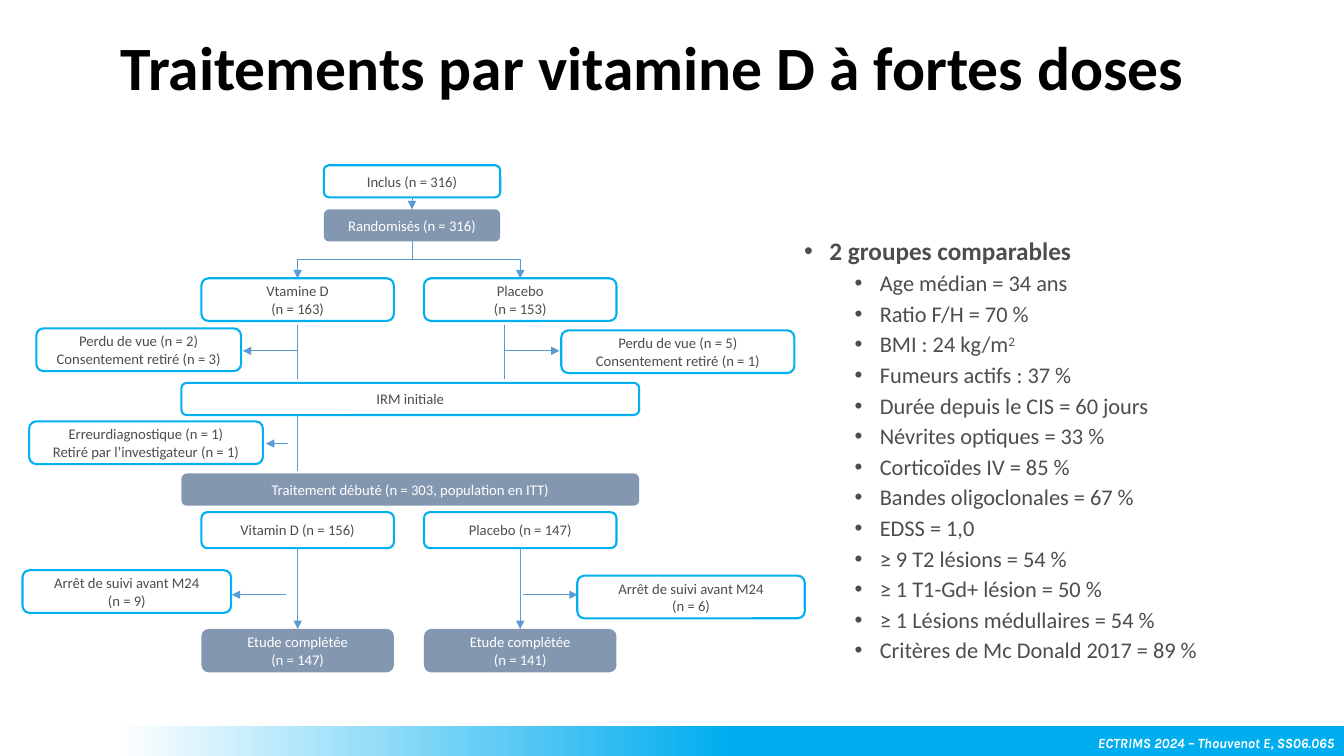
from copy import deepcopy

from lxml import etree
from pptx import Presentation
from pptx.dml.color import RGBColor
from pptx.enum.shapes import MSO_CONNECTOR as Link, MSO_SHAPE as Shape
from pptx.enum.text import MSO_ANCHOR as Anchor, PP_ALIGN as Align
from pptx.oxml.ns import qn
from pptx.util import Pt

WHITE = RGBColor(0xFF, 0xFF, 0xFF)
BLACK = RGBColor(0, 0, 0)
GREY = RGBColor(0x4D, 0x4D, 0x4D)
SLATE = RGBColor(0x84, 0x97, 0xB0)
CYAN = RGBColor(0x00, 0xB0, 0xF0)
FOOTER_BLUE = RGBColor(0x00, 0xAD, 0xEF)
ARROW_BLUE = RGBColor(0x5B, 0x9B, 0xD5)

# Centre lines of the flow chart, in points
TRUNK, VITAMIN, PLACEBO = 294.3, 212.6, 371.6
ARM_WIDTH, ROW, DOUBLE_ROW = 137.5, 23, 30.5

FLOW_STEPS = [  # label, centre, top, width, height, highlighted
    ("Inclus (n = 316)", TRUNK, 118, 126, ROW, False),
    ("Randomisés (n = 316)", TRUNK, 149.5, 126, ROW, True),
    ("Vtamine D\n(n = 163)", VITAMIN, 198.8, ARM_WIDTH, DOUBLE_ROW, False),
    ("Placebo\n(n = 153)", PLACEBO, 198.8, ARM_WIDTH, DOUBLE_ROW, False),
    ("Perdu de vue (n = 2)\nConsentement retiré (n = 3)", 99.1, 234.6, 146.3, DOUBLE_ROW, False),
    ("Perdu de vue (n = 5)\nConsentement retiré (n = 1)", 484.2, 236, 166.5, DOUBLE_ROW, False),
    ("IRM initiale", 293.1, 273.5, 327, ROW, False),
    ("Erreurdiagnostique (n = 1)\nRetiré par l’investigateur (n = 1)", 104.3, 301, 167, DOUBLE_ROW, False),
    ("Traitement débuté (n = 303, population en ITT)", 293.1, 338.2, 327, ROW, True),
    ("Vitamin D (n = 156)", VITAMIN, 365.8, ARM_WIDTH, 25.7, False),
    ("Placebo (n = 147)", PLACEBO, 365.8, ARM_WIDTH, 25.7, False),
    ("Etude complétée\n(n = 147)", VITAMIN, 449.3, ARM_WIDTH, 31, True),
    ("Etude complétée\n(n = 141)", PLACEBO, 449.3, ARM_WIDTH, 31, True),
    ("Arrêt de suivi avant M24\n(n = 9)", 90.6, 407.3, 149, DOUBLE_ROW, False),
    ("Arrêt de suivi avant M24\n(n = 6)", 493.6, 411.2, 162.5, DOUBLE_ROW, False),
]

ARROWS = [  # start x, start y, end x, end y
    (TRUNK, 141, TRUNK, 149.5),
    (VITAMIN, 250.6, 173.5, 250.6),
    (360.7, 250.6, 399.6, 250.6),
    (206, 316.8, 190, 316.8),
    (VITAMIN, 391.3, VITAMIN, 449.3),
    (PLACEBO, 391.3, PLACEBO, 449.3),
    (204.5, 424.8, 165.6, 424.8),
    (373.7, 424.8, 412.6, 424.8),
]
PLAIN_LINES = [
    (VITAMIN, 231.8, VITAMIN, 270.7),
    (360, 231.8, 360, 270.7),
    (VITAMIN, 297.4, VITAMIN, 336.2),
]

BASELINE_DATA = [
    "Age médian = 34 ans", "Ratio F/H = 70 %", "BMI : 24 kg/m^2",
    "Fumeurs actifs : 37 %", "Durée depuis le CIS = 60 jours",
    "Névrites optiques = 33 %", "Corticoïdes IV = 85 %",
    "Bandes oligoclonales = 67 %", "EDSS = 1,0", "≥ 9 T2 lésions = 54 %",
    "≥ 1 T1-Gd+ lésion = 50 %", "≥ 1 Lésions médullaires = 54 %",
    "Critères de Mc Donald 2017 = 89 %",
]


def write(paragraph, text, size=10.5, color=GREY, font="Calibri", bold=False,
          italic=False, align=Align.CENTER):
    """Add formatted text; whatever follows a ^ is superscript."""
    paragraph.alignment = align
    for index, part in enumerate(text.split("^")):
        run = paragraph.add_run()
        run.text = part
        run.font.size, run.font.name = Pt(size), font
        run.font.bold, run.font.italic = bold, italic
        run.font.color.rgb = color
        if index:
            run.font._element.set("baseline", "30000")


class FlowSlide:
    """The slide with its flow chart, bullet list and footer style."""

    def __init__(self, deck):
        self.slide = deck.slides.add_slide(deck.slide_layouts[5])
        self.shapes = self.slide.shapes

    def title(self, text):
        heading = self.shapes.title
        heading.left, heading.top, heading.width, heading.height = (
            Pt(52.4), Pt(-2), Pt(828), Pt(104.4))
        heading.text_frame.vertical_anchor = Anchor.MIDDLE
        line = heading.text_frame.paragraphs[0]
        line.line_spacing = 0.9
        write(line, text, size=44, color=BLACK, bold=True)

    def step(self, label, center, top, width, height, highlighted):
        box = self.shapes.add_shape(Shape.ROUNDED_RECTANGLE, Pt(center - width / 2),
                                    Pt(top), Pt(width), Pt(height))
        box.shadow.inherit = False
        box.fill.solid()
        box.fill.fore_color.rgb = SLATE if highlighted else WHITE
        if highlighted:
            box.line.fill.background()
        else:
            box.line.color.rgb, box.line.width = CYAN, Pt(1.5)
        frame = box.text_frame
        frame.word_wrap, frame.vertical_anchor = True, Anchor.MIDDLE
        frame.margin_top = frame.margin_bottom = 0
        for index, text in enumerate(label.split("\n")):
            line = frame.add_paragraph() if index else frame.paragraphs[0]
            write(line, text, color=WHITE if highlighted else GREY)

    def link(self, x1, y1, x2, y2, kind=Link.STRAIGHT, arrow=True):
        line = self.shapes.add_connector(kind, Pt(x1), Pt(y1), Pt(x2), Pt(y2))
        line.line.color.rgb, line.line.width = ARROW_BLUE, Pt(0.5)
        if arrow:
            stroke = line.line._get_or_add_ln()
            etree.SubElement(stroke, qn("a:tailEnd"), type="triangle")
        properties = line._element.spPr
        etree.SubElement(properties, qn("a:effectLst"))
        return properties.find(qn("a:xfrm"))

    def branch(self, x1, y1, x2, y2):
        """Draw an elbow arrow that leaves downwards, by turning it a quarter."""
        side = 1 if x2 > x1 else -1
        middle_x, middle_y = (x1 + x2) / 2, (y1 + y2) / 2
        half_run, half_drop = abs(x2 - x1) / 2, (y2 - y1) / 2
        frame = self.link(middle_x + side * half_drop, middle_y - half_run,
                          middle_x - side * half_drop, middle_y + half_run, Link.ELBOW)
        frame.set("rot", str((270 if side > 0 else 90) * 60000))

    def bullets(self, heading, items):
        frame = self.shapes.add_textbox(Pt(567.4), Pt(167), Pt(324), Pt(341.3)).text_frame
        frame.word_wrap = True
        for index, text in enumerate([heading, *items]):
            line = frame.add_paragraph() if index else frame.paragraphs[0]
            line.level = 1 if index else 0
            line.line_spacing = 0.9
            line.space_before = Pt(4.6 if index else 0)
            write(line, text, size=16 if index else 18, bold=not index, align=Align.LEFT)
            layout = line._p.get_or_add_pPr()
            layout.set("marL", str(Pt(54 if index else 18)))
            layout.set("indent", str(Pt(-18)))
            etree.SubElement(layout, qn("a:buFont"), typeface="Arial")
            etree.SubElement(layout, qn("a:buChar"), char="•")

    def footer(self, text):
        bar = self.shapes.add_shape(Shape.RECTANGLE, Pt(82.8), Pt(518.4), Pt(877.2), Pt(21.6))
        bar.shadow.inherit = False
        bar.line.fill.background()
        bar.fill.gradient()
        bar.fill.gradient_angle = 180
        stops = bar._element.spPr.find(".//" + qn("a:gsLst"))
        stops.insert(0, deepcopy(stops[0]))
        colors = [(0, FOOTER_BLUE), (0.5, FOOTER_BLUE), (1, WHITE)]
        for stop, (position, color) in zip(bar.fill.gradient_stops, colors):
            stop.position, stop.color.rgb = position, color
        frame = bar.text_frame
        frame.word_wrap, frame.vertical_anchor = False, Anchor.BOTTOM
        write(frame.paragraphs[0], text, size=10, color=WHITE, font="Karla",
              bold=True, italic=True, align=Align.RIGHT)


def main():
    deck = Presentation()
    deck.slide_width, deck.slide_height = Pt(960), Pt(540)
    page = FlowSlide(deck)
    page.title("Traitements par vitamine D à fortes doses")
    page.bullets("2 groupes comparables", BASELINE_DATA)
    for step in FLOW_STEPS:
        page.step(*step)
    for arm in (VITAMIN, PLACEBO):
        page.branch(TRUNK, 172.4, arm, 198.8)
    for ends in ARROWS:
        page.link(*ends)
    for ends in PLAIN_LINES:
        page.link(*ends, arrow=False)
    page.footer("ECTRIMS 2024 – Thouvenot E, SS06.065")
    deck.save("out.pptx")


if __name__ == "__main__":
    main()
